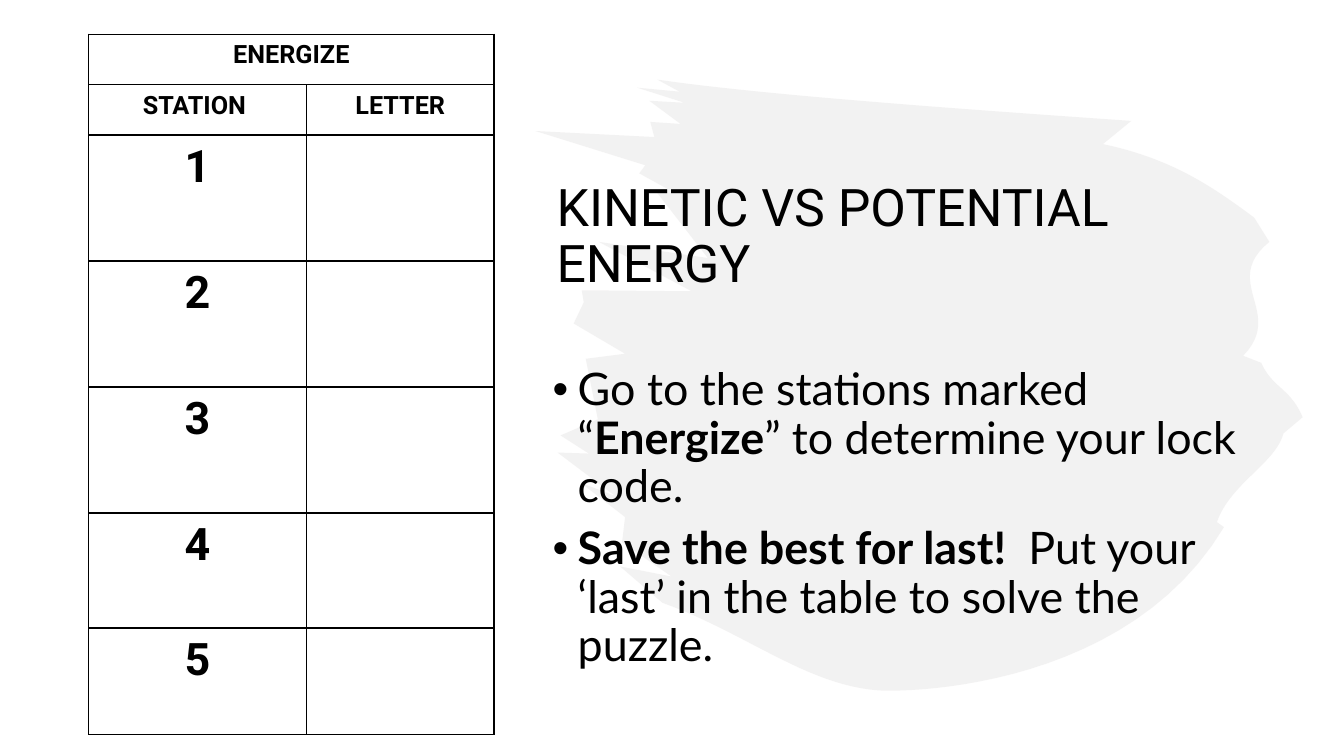
import pptx
import pptx.util
import pptx.oxml
import pptx.oxml.ns
import pptx.dml.color
import pptx.enum.text

Inches = pptx.util.Inches
Pt = pptx.util.Pt
ALIGN = pptx.enum.text.PP_ALIGN
ANCHOR = pptx.enum.text.MSO_ANCHOR
COLORS = {"ink": "000000", "brush": "E7E6E6"}

TITLE = [[("KINETIC VS POTENTIAL ENERGY", False)]]
BODY = [
    [("Go to the stations marked “", False), ("Energize", True),
     ("” to determine your lock code.", False)],
    [("Save the best for last!  ", True),
     ("Put your ‘last’ in the table to solve the puzzle.", False)],
]
HEADS = [["ENERGIZE", ""], ["STATION ", "LETTER"]]
STATIONS = [[str(n), ""] for n in range(1, 6)]
COLS = [2.16, 1.86]
ROWS = [0.5] * len(HEADS) + [1.25] * 3 + [1.14, 1.06]

TITLE_BOX = (5.42, 1.18, 7.35, 1.78)
BODY_BOX = (5.38, 3.59, 7.46, 2.65)
TABLE_BOX = (0.88, 0.34, sum(COLS), sum(ROWS))

SWEEPS = {
    "top": [(6.52, 0.79), (7.6, 0.95), (9.8, 1.1), (11.22, 1.2)],
    "shoulder": [(10.94, 1.43), (11.6, 1.57), (12, 1.83), (12.44, 2.16)],
    "flank": [(12.59, 2.4), (12.1, 2.8), (12.75, 3.1), (12.33, 3.53)],
    "point": [(12.51, 3.6), (12.62, 3.85), (12.8, 3.85), (12.92, 4.14)],
    "hip": [(12.73, 4.3), (12.65, 4.6), (12.2, 4.8), (12.07, 5.18)],
    "belly": [(12.14, 5.23), (11.2, 6.8), (9.1, 6.87), (8.72, 6.85)],
    "base": [(8.72, 6.85), (8, 6.8), (7.4, 6.28), (6.57, 5.98)],
}
BRISTLES = [
    {"tip": (6.15, 5.62), "notch": (6.66, 5.72)},
    {"tip": (6.17, 5.38), "notch": (6.2, 5.13)},
    {"tip": (5.76, 4.79), "notch": (6.1, 4.92)},
    {"tip": (5.53, 4.49), "notch": (5.84, 4.5)},
    {"tip": (5.56, 4.32), "notch": (5.93, 4.16)},
    {"tip": (5.81, 3.56), "notch": (6.2, 3.51)},
    {"tip": (5.69, 3.21), "notch": (5.79, 3)},
    {"tip": (5.77, 2.88), "notch": (6.86, 2.89)},
    {"tip": (5.94, 2.4), "notch": (7.02, 2.56)},
    {"tip": (6.5, 1.89), "notch": (6.63, 1.88)},
    {"tip": (6.34, 1.72), "notch": (6.4, 1.64)},
    {"tip": (5.31, 1.3), "notch": (6.49, 1.36)},
    {"tip": (6.45, 1.21), "notch": (6.75, 1.23)},
    {"tip": (6.44, 1), "notch": (6.79, 1.02)},
    {"tip": (6.32, 0.87), "notch": (6.74, 0.91)},
]

FORMATS = {
    "title": {"font": {"name": "Roboto", "size": Pt(37)},
              "para": {"alignment": ALIGN.LEFT, "line_spacing": 0.9}},
    "body": {"font": {"name": "Lato", "size": Pt(32)},
             "para": {"line_spacing": 0.9, "space_before": Pt(10)}},
    "head": {"font": {"name": "Roboto", "size": Pt(18)},
             "para": {"alignment": ALIGN.CENTER}},
    "station": {"font": {"name": "Roboto", "size": Pt(32)},
                "para": {"alignment": ALIGN.CENTER}},
}
CELL = {"margin_left": Inches(0.13), "margin_right": Inches(0.13),
        "margin_top": Inches(0.06), "margin_bottom": Inches(0.06)}


def apply(item, values):
    for key, value in values.items():
        setattr(item, key, value)


def color(name):
    return pptx.dml.color.RGBColor.from_string(COLORS[name])


def place(shape, box):
    apply(shape, dict(zip(("left", "top", "width", "height"), map(Inches, box))))


def write(frame, lines, style):
    for i, line in enumerate(lines):
        para = frame.add_paragraph() if i else frame.paragraphs[0]
        apply(para, FORMATS[style]["para"])
        for text, bold in line:
            run = para.add_run()
            run.text = text
            apply(run.font, {**FORMATS[style]["font"], "bold": bold})
            run.font.color.rgb = color("ink")


def curve(start, pull, push, end, steps=24):
    for t in (n / steps for n in range(steps + 1)):
        u = 1 - t
        yield tuple(u**3 * a + 3 * u * u * t * b + 3 * u * t * t * c + t**3 * d
                    for a, b, c, d in zip(start, pull, push, end))


def draw_brush(slide):
    smooth = [point for sweep in SWEEPS.values() for point in curve(*sweep)]
    ragged = [bristle[end] for bristle in BRISTLES for end in ("tip", "notch")]
    points = [tuple(map(Inches, point)) for point in smooth + ragged]
    outline = slide.shapes.build_freeform(*points[0])
    outline.add_line_segments(points[1:], close=True)
    brush = outline.convert_to_shape()
    brush.shadow.inherit = False
    brush.fill.solid()
    brush.fill.fore_color.rgb = color("brush")
    brush.line.fill.background()
    tint = brush._element.spPr.find(".//" + pptx.oxml.ns.qn("a:srgbClr"))
    tint.append(pptx.oxml.parse_xml(
        f'<a:alpha {pptx.oxml.ns.nsdecls("a")} val="50000"/>'))
    slide.shapes._spTree.insert(2, brush._element)


def draw_border(cell):
    props = cell._tc.get_or_add_tcPr()
    for i, side in enumerate(("lnL", "lnR", "lnT", "lnB")):
        props.insert(i, pptx.oxml.parse_xml(
            f'<a:{side} {pptx.oxml.ns.nsdecls("a")} w="{Pt(1)}"><a:solidFill>'
            f'<a:srgbClr val="{COLORS["ink"]}"/></a:solidFill></a:{side}>'))


def draw_table(slide):
    table = slide.shapes.add_table(len(ROWS), len(COLS), *map(Inches, TABLE_BOX)).table
    apply(table, {"first_row": False, "horz_banding": False})
    for col, width in zip(table.columns, COLS):
        col.width = Inches(width)
    for row, height in zip(table.rows, ROWS):
        row.height = Inches(height)
    table.cell(0, 0).merge(table.cell(0, 1))
    for r, texts in enumerate(HEADS + STATIONS):
        style = "head" if r < len(HEADS) else "station"
        for c, text in enumerate(texts):
            cell = table.cell(r, c)
            apply(cell, CELL)
            cell.fill.background()
            draw_border(cell)
            if text:
                write(cell.text_frame, [[(text, True)]], style)


def fill_text(shape, box, lines, style, anchor):
    place(shape, box)
    apply(shape.text_frame, {"vertical_anchor": anchor, "word_wrap": True,
                             "auto_size": pptx.enum.text.MSO_AUTO_SIZE.NONE})
    write(shape.text_frame, lines, style)


def hang_bullets(shape):
    for para in shape.text_frame.paragraphs:
        props = para._p.get_or_add_pPr()
        props.set("marL", str(Inches(0.25)))
        props.set("indent", str(-Inches(0.25)))


def main():
    deck = pptx.Presentation()
    apply(deck, {"slide_width": Inches(13.33), "slide_height": Inches(7.5)})
    slide = deck.slides.add_slide(deck.slide_layouts[1])
    title, body = slide.placeholders
    fill_text(title, TITLE_BOX, TITLE, "title", ANCHOR.BOTTOM)
    fill_text(body, BODY_BOX, BODY, "body", ANCHOR.TOP)
    hang_bullets(body)
    draw_brush(slide)
    draw_table(slide)
    deck.save("out.pptx")


if __name__ == "__main__":
    main()
